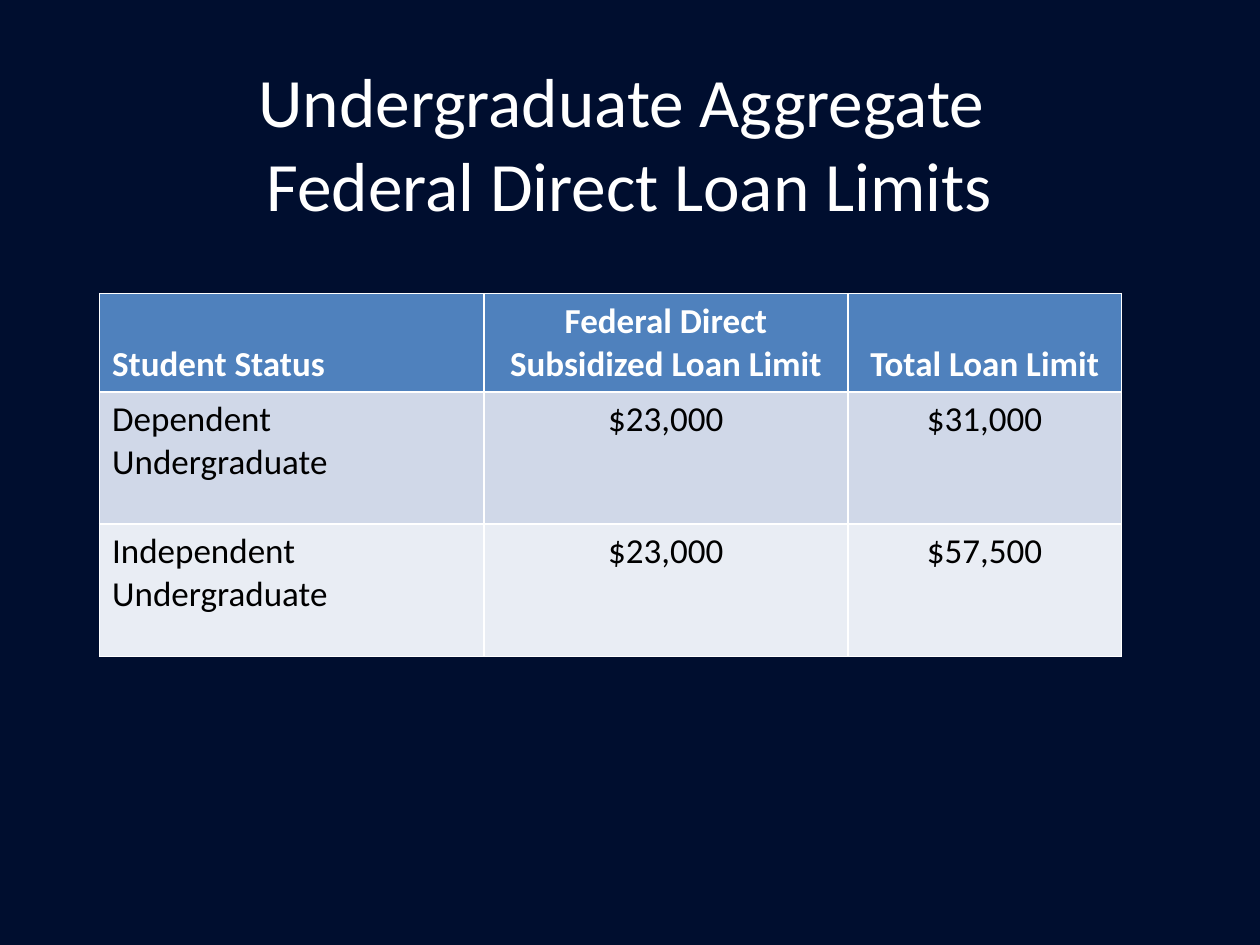
import pptx
import pptx.util
import pptx.dml.color
import pptx.enum.text

Inches = pptx.util.Inches
Pt = pptx.util.Pt
RGBColor = pptx.dml.color.RGBColor
Align = pptx.enum.text.PP_ALIGN
Anchor = pptx.enum.text.MSO_ANCHOR

NAVY = RGBColor(0x00, 0x0E, 0x2F)
WHITE = RGBColor(0xFF, 0xFF, 0xFF)
BLACK = RGBColor(0x00, 0x00, 0x00)
BLUE = RGBColor(0x4F, 0x81, 0xBD)
BANDS = [RGBColor(0xD0, 0xD8, 0xE8), RGBColor(0xE9, 0xED, 0xF4)]
FONT = "Calibri"

LIMITS = [
    ["Student Status", "Federal Direct Subsidized Loan Limit", "Total Loan Limit"],
    ["Dependent Undergraduate", "$23,000", "$31,000"],
    ["Independent Undergraduate", "$23,000", "$57,500"],
]
COLS = [3.05, 2.89, 2.17]
ROWS = [0.77, 1.05, 1.05]


def style(para, size, color, align, bold=False):
    para.alignment = align
    for run in para.runs:
        font = run.font
        font.name, font.size, font.bold = FONT, Pt(size), bold
        font.color.rgb = color


def add_title(slide, left, top, width, height):
    title = slide.shapes.title
    title.left, title.top = Inches(left), Inches(top)
    title.width, title.height = Inches(width), Inches(height)
    frame = title.text_frame
    frame.text = "Undergraduate Aggregate \vFederal Direct Loan Limits"
    frame.word_wrap = True
    frame.auto_size = pptx.enum.text.MSO_AUTO_SIZE.NONE
    frame.vertical_anchor = Anchor.MIDDLE
    style(frame.paragraphs[0], 39.6, WHITE, Align.CENTER)


def fill_cell(cell, text, row, col):
    head = row == 0
    cell.text_frame.text = text
    cell.vertical_anchor = Anchor.BOTTOM if head else Anchor.TOP
    cell.fill.solid()
    cell.fill.fore_color.rgb = BLUE if head else BANDS[(row - 1) % 2]
    style(cell.text_frame.paragraphs[0], 20, WHITE if head else BLACK,
          Align.CENTER if col else Align.LEFT, head)


def add_limits(slide, left, top):
    """Add the loan table; its default style draws the white rules."""
    table = slide.shapes.add_table(
        len(ROWS), len(COLS), Inches(left), Inches(top),
        Inches(sum(COLS)), Inches(sum(ROWS))).table
    for col, width in zip(table.columns, COLS):
        col.width = Inches(width)
    for row, height in zip(table.rows, ROWS):
        row.height = Inches(height)
    for r, texts in enumerate(LIMITS):
        for c, text in enumerate(texts):
            fill_cell(table.cell(r, c), text, r, c)


def main():
    deck = pptx.Presentation()
    deck.slide_width, deck.slide_height = Inches(10), Inches(7.5)
    slide = deck.slides.add_slide(deck.slide_layouts[5])
    slide.background.fill.solid()
    slide.background.fill.fore_color.rgb = NAVY
    add_title(slide, 0.33, 0.5, 9.33, 1.25)
    add_limits(slide, 0.79, 2.33)
    deck.save("out.pptx")


if __name__ == "__main__":
    main()
